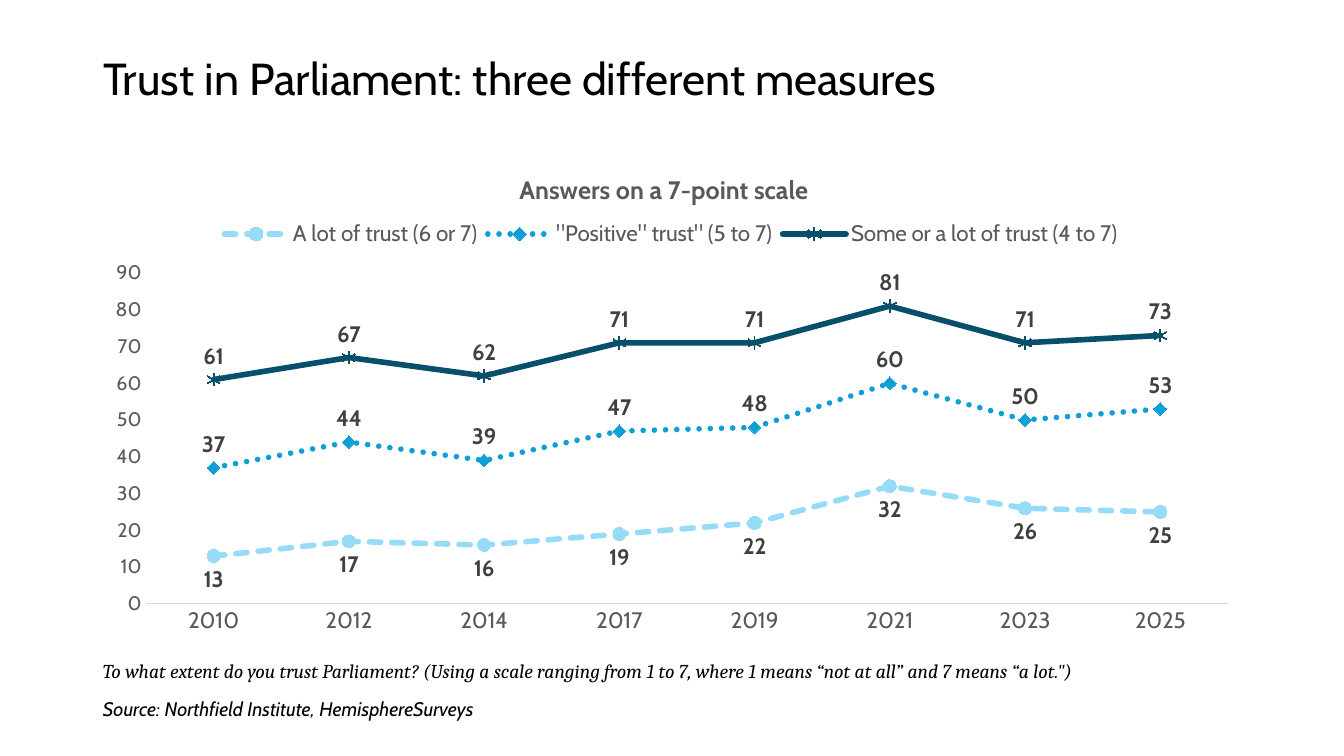
import pptx
import pptx.util
import pptx.chart.data
from lxml import etree
from pptx.dml.color import RGBColor
from pptx.enum.chart import (XL_CHART_TYPE, XL_LABEL_POSITION, XL_LEGEND_POSITION,
                             XL_MARKER_STYLE, XL_TICK_MARK)
from pptx.enum.dml import MSO_LINE
from pptx.enum.text import MSO_ANCHOR, PP_ALIGN
from pptx.oxml.ns import qn

PX = 12192000 / 1344
BLACK = RGBColor(0x00, 0x00, 0x00)
LABEL_GREY = RGBColor(0x40, 0x40, 0x40)
TEXT_GREY = RGBColor(0x59, 0x59, 0x59)
AXIS_GREY = RGBColor(0xD9, 0xD9, 0xD9)
PALE_BLUE = RGBColor(0x96, 0xDC, 0xF8)
MID_BLUE = RGBColor(0x0F, 0x9E, 0xD5)
DARK_BLUE = RGBColor(0x08, 0x4F, 0x6A)
CHART_BOX = (93, 144, 1159, 501)


def set_font(font, size, color, name="Cabin", bold=False, italic=False):
    font.name = name
    font.size = pptx.util.Pt(size)
    font.color.rgb = color
    font.bold = bold
    font.italic = italic


def set_layout(element, index, **edges):
    """Give a chart part a fixed place, from pixels on the slide."""
    for old in element.findall(qn("c:layout")):
        element.remove(old)
    layout = etree.Element(qn("c:layout"))
    manual = etree.SubElement(layout, qn("c:manualLayout"))
    if "w" in edges and index == 0:
        etree.SubElement(manual, qn("c:layoutTarget")).set("val", "inner")
    for axis in "xy":
        etree.SubElement(manual, qn(f"c:{axis}Mode")).set("val", "edge")
    left, top, width, height = CHART_BOX
    origin = {"x": left, "y": top, "w": 0, "h": 0}
    extent = {"x": width, "y": height, "w": width, "h": height}
    for key, value in edges.items():
        share = round((value - origin[key]) / extent[key], 4)
        etree.SubElement(manual, qn(f"c:{key}")).set("val", str(share))
    element.insert(index, layout)


deck = pptx.Presentation()
deck.slide_width = round(1344 * PX)
deck.slide_height = round(756 * PX)
slide = deck.slides.add_slide(deck.slide_layouts[5])

headline = slide.shapes.title
headline.left, headline.top, headline.width, headline.height = [
    round(v * PX) for v in (93, 40, 1159, 83)]
headline.text_frame.text = "Trust in Parliament: three different measures"
headline.text_frame.vertical_anchor = MSO_ANCHOR.MIDDLE
headline_line = headline.text_frame.paragraphs[0]
headline_line.alignment = PP_ALIGN.LEFT
headline_line.line_spacing = 0.9
set_font(headline_line.font, 32, BLACK)

# Trust chart
measures = [
    ("A lot of trust (6 or 7)", (13, 17, 16, 19, 22, 32, 26, 25), PALE_BLUE,
     MSO_LINE.DASH, XL_MARKER_STYLE.CIRCLE, XL_LABEL_POSITION.BELOW),
    ('"Positive" trust" (5 to 7)', (37, 44, 39, 47, 48, 60, 50, 53), MID_BLUE,
     MSO_LINE.ROUND_DOT, XL_MARKER_STYLE.DIAMOND, XL_LABEL_POSITION.ABOVE),
    ("Some or a lot of trust (4 to 7)", (61, 67, 62, 71, 71, 81, 71, 73), DARK_BLUE,
     None, XL_MARKER_STYLE.STAR, XL_LABEL_POSITION.ABOVE),
]
# Preset dash names as they stand in the file format
dash_presets = {MSO_LINE.DASH: "sysDash", MSO_LINE.ROUND_DOT: "sysDot"}

answers = pptx.chart.data.CategoryChartData()
answers.categories = ["2010", "2012", "2014", "2017", "2019", "2021", "2023", "2025"]
for measure in measures:
    answers.add_series(measure[0], measure[1])
chart = slide.shapes.add_chart(
    XL_CHART_TYPE.LINE_MARKERS, *[round(v * PX) for v in CHART_BOX], answers).chart
set_font(chart.font, 16, BLACK)

chart.has_title = True
chart_title = chart.chart_title
chart_title.include_in_layout = False
chart_title.text_frame.text = "Answers on a 7-point scale"
set_font(chart_title.text_frame.paragraphs[0].font, 18, TEXT_GREY, bold=True)

chart.has_legend = True
chart.legend.position = XL_LEGEND_POSITION.TOP
chart.legend.include_in_layout = False
set_font(chart.legend.font, 16, TEXT_GREY)

years, percents = chart.category_axis, chart.value_axis
for axis, size in ((years, 16), (percents, 14)):
    axis.major_tick_mark = axis.minor_tick_mark = XL_TICK_MARK.NONE
    axis.has_major_gridlines = False
    set_font(axis.tick_labels.font, size, TEXT_GREY)
years.format.line.color.rgb = AXIS_GREY
years.format.line.width = pptx.util.Pt(0.75)
percents.format.line.fill.background()
percents.minimum_scale, percents.maximum_scale, percents.major_unit = 0, 90, 10

chart.plots[0].vary_by_categories = False
for series, (_, _, color, dash, marker, position) in zip(chart.plots[0].series, measures):
    series.smooth = False
    line = series.format.line
    line.color.rgb = color
    line.width = pptx.util.Pt(4)
    if dash is not None:
        line.dash_style = dash
        series.format.line._ln.find(qn("a:prstDash")).set("val", dash_presets[dash])
    series.format.line._ln.set("cap", "rnd")
    series.marker.style = marker
    series.marker.size = 9
    series.marker.format.fill.solid()
    series.marker.format.fill.fore_color.rgb = color
    series.marker.format.line.color.rgb = color
    labels = series.data_labels
    labels.show_value = True
    labels.position = position
    set_font(labels.font, 16, LABEL_GREY, bold=True)

set_layout(chart_title._element, 1, x=515, y=168)
set_layout(chart.legend._element, 1, x=214, y=216, w=914, h=36)
set_layout(chart._chartSpace.chart.plotArea, 0, x=146, y=273, w=1082, h=331)

# Question wording and source
footnotes = [
    ("To what extent do you trust Parliament? (Using a scale ranging from 1 to 7, "
     "where 1 means “not at all” and 7 means “a lot.\")", "Cambria", 654, 1152, True),
    ("Source: Northfield Institute, HemisphereSurveys", "Cabin", 692, 432, False),
]
for wording, typeface, top, width, wraps in footnotes:
    note = slide.shapes.add_textbox(*[round(v * PX) for v in (93, top, width, 34)])
    note.text_frame.word_wrap = wraps
    note.text_frame.text = wording
    set_font(note.text_frame.paragraphs[0].font, 14, BLACK, typeface, italic=True)

deck.save("out.pptx")
